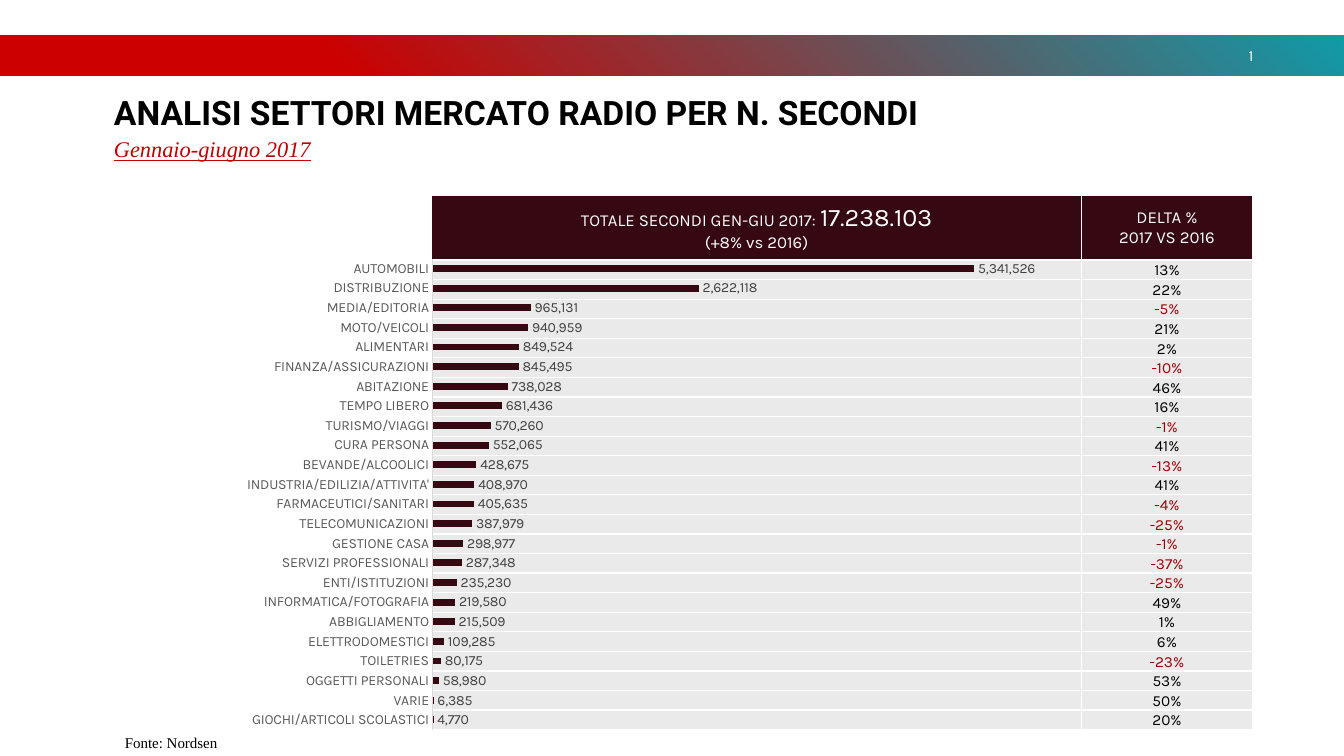
from pptx import Presentation
from pptx.chart.data import CategoryChartData
from pptx.dml.color import RGBColor
from pptx.enum.chart import XL_CHART_TYPE as ChartType, XL_LABEL_POSITION as LabelPosition, XL_TICK_MARK as TickMark
from pptx.enum.shapes import MSO_SHAPE as Preset
from pptx.enum.text import MSO_ANCHOR as Anchor, MSO_AUTO_SIZE as AutoSize, PP_ALIGN as Align
from pptx.oxml import parse_xml
from pptx.oxml.ns import nsdecls, qn
from pptx.util import Inches, Pt

WINE, GREY, RED = "360812", "EAEAEA", "9C0006"
SECTORS = [
    ("AUTOMOBILI", 5341526, 13), ("DISTRIBUZIONE", 2622118, 22),
    ("MEDIA/EDITORIA", 965131, -5), ("MOTO/VEICOLI", 940959, 21),
    ("ALIMENTARI", 849524, 2), ("FINANZA/ASSICURAZIONI", 845495, -10),
    ("ABITAZIONE", 738028, 46), ("TEMPO LIBERO", 681436, 16),
    ("TURISMO/VIAGGI", 570260, -1), ("CURA PERSONA", 552065, 41),
    ("BEVANDE/ALCOOLICI", 428675, -13), ("INDUSTRIA/EDILIZIA/ATTIVITA'", 408970, 41),
    ("FARMACEUTICI/SANITARI", 405635, -4), ("TELECOMUNICAZIONI", 387979, -25),
    ("GESTIONE CASA", 298977, -1), ("SERVIZI PROFESSIONALI", 287348, -37),
    ("ENTI/ISTITUZIONI", 235230, -25), ("INFORMATICA/FOTOGRAFIA", 219580, 49),
    ("ABBIGLIAMENTO", 215509, 1), ("ELETTRODOMESTICI", 109285, 6),
    ("TOILETRIES", 80175, -23), ("OGGETTI PERSONALI", 58980, 53),
    ("VARIE", 6385, 50), ("GIOCHI/ARTICOLI SCOLASTICI", 4770, 20),
]


def color(value):
    return RGBColor.from_string(value)


def style(font, size, name, value):
    font.size, font.name = Pt(size), name
    font.color.rgb = color(value)


deck = Presentation()
deck.slide_width, deck.slide_height = Inches(13.33), Inches(7.5)
page = deck.slides.add_slide(deck.slide_layouts[5])

band = page.shapes.add_shape(Preset.RECTANGLE, 0, Inches(0.35), Inches(13.33), Inches(0.4))
band.shadow.inherit = False
band.line.fill.background()
band.fill.gradient()
for stop, (position, shade) in zip(band.fill.gradient_stops, [(0.25, "CC0000"), (1, "119AA8")]):
    stop.position = position
    stop.color.rgb = color(shade)
gradient = band._element.spPr.find(qn("a:gradFill"))
gradient.replace(gradient.find(qn("a:lin")), parse_xml(
    f'<a:path {nsdecls("a")} path="circle"><a:fillToRect t="100000" r="100000"/></a:path>'))

title = page.shapes.title
title.left, title.top, title.width, title.height = Inches(1.13), Inches(0.96), Inches(9.23), Inches(0.67)
frame = title.text_frame
frame.auto_size, frame.vertical_anchor = AutoSize.NONE, Anchor.TOP
frame.margin_left = frame.margin_top = frame.margin_right = frame.margin_bottom = 0
frame.text = "ANALISI SETTORI MERCATO RADIO PER N. SECONDI\nGennaio-giugno 2017"
heading, period = frame.paragraphs
for para in (heading, period):
    para.alignment, para.line_spacing = Align.LEFT, 0.9
style(heading.font, 24, "Roboto", "000000")
heading.font.bold = True
style(period.font, 16, "Times New Roman", "C00000")
period.font.italic = period.font.underline = True
period.space_before = Pt(4)

source = page.shapes.add_textbox(Inches(1.14), Inches(7.22), Inches(1.47), Inches(0.28))
source.text_frame.word_wrap = True
source.text_frame.vertical_anchor = Anchor.BOTTOM
para = source.text_frame.paragraphs[0]
para.text = "Fonte: Nordsen"
para.space_before = Pt(3)
style(para.font, 10.7, "Times New Roman", "000000")

number = page.shapes.add_textbox(Inches(10.2), Inches(0.4), Inches(2.33), Inches(0.3))
number.text_frame.word_wrap = True
number.text_frame.vertical_anchor = Anchor.MIDDLE
para = number.text_frame.paragraphs[0]
para.alignment = Align.RIGHT
style(para.font, 11, "Karla", "FFFFFF")
para._p.append(parse_xml(
    f'<a:fld {nsdecls("a")} id="{{B6F15528-21DE-4FAA-801E-634DDDAF4B2B}}" type="slidenum">'
    '<a:rPr lang="it-IT"/><a:t>1</a:t></a:fld>'))

table = page.shapes.add_table(len(SECTORS) + 1, 2, Inches(4.28), Inches(1.94), Inches(8.14), Inches(5.29)).table
table.columns[0].width, table.columns[1].width = Inches(6.45), Inches(1.69)
for index, row in enumerate(table.rows):
    header = index == 0
    row.height = Inches(0.63) if header else Inches((5.29 - 0.63) / len(SECTORS))
    for cell in row.cells:
        cell.margin_left = cell.margin_right = Inches(0.13 if header else 0.01)
        cell.margin_top = Inches(0.07 if header else 0.01)
        cell.margin_bottom = Inches(0.07 if header else 0)
        cell.vertical_anchor = Anchor.MIDDLE if header else Anchor.BOTTOM
        for side in "LRTB":
            cell._tc.get_or_add_tcPr().append(parse_xml(
                f'<a:ln{side} {nsdecls("a")} w="{Pt(1)}"><a:solidFill>'
                f'<a:srgbClr val="FFFFFF"/></a:solidFill></a:ln{side}>'))
        cell.fill.solid()
        cell.fill.fore_color.rgb = color(WINE if header else GREY)
    if header:
        row.cells[0].text = "TOTALE SECONDI GEN-GIU 2017: \n(+8% vs 2016)"
        row.cells[1].text = "DELTA %\v2017 VS 2016"
    else:
        delta = SECTORS[index - 1][2]
        row.cells[1].text = f"{delta}%"
        row.cells[0]._tc.txBody.p_lst[0].append(parse_xml(f'<a:endParaRPr {nsdecls("a")} sz="1000"/>'))
    for cell in row.cells:
        for para in cell.text_frame.paragraphs:
            para.alignment = Align.CENTER
            shade = "FFFFFF" if header else RED if delta < 0 else "000000"
            style(para.font, 12 if header else 11, "Karla", shade)
total = table.cell(0, 0).text_frame.paragraphs[0].add_run()
total.text = "17.238.103"
total.font.size = Pt(18)

data = CategoryChartData(number_format="#,##0")
data.categories = [name for name, seconds, delta in SECTORS]
data.add_series("Series 1", [seconds for name, seconds, delta in SECTORS])
chart = page.shapes.add_chart(
    ChartType.BAR_CLUSTERED, Inches(1.46), Inches(2.37), Inches(9.14), Inches(4.92), data).chart
chart.has_legend = chart.has_title = False
style(chart.font, 10, "Calibri", "000000")

sector_axis = chart.category_axis
sector_axis.reverse_order = True
sector_axis.major_tick_mark = sector_axis.minor_tick_mark = TickMark.NONE
style(sector_axis.tick_labels.font, 10, "Karla", "595959")
sector_axis.format.line.color.rgb = color("D9D9D9")
sector_axis.format.line.width = Pt(0.75)
seconds_axis = chart.value_axis
seconds_axis.minimum_scale, seconds_axis.maximum_scale = 0, 6000000
seconds_axis.has_major_gridlines = False
seconds_axis.visible = False

plot = chart.plots[0]
plot.gap_width, plot.vary_by_categories = 182, False
bars = plot.series[0]
bars.format.fill.solid()
bars.format.fill.fore_color.rgb = color(WINE)
labels = bars.data_labels
labels.show_value = True
labels.position = LabelPosition.OUTSIDE_END
labels.number_format, labels.number_format_is_linked = "#,##0", False
style(labels.font, 10, "Karla", "404040")

chart._chartSpace.chart.plotArea.insert(0, parse_xml(
    f'<c:layout {nsdecls("c")}><c:manualLayout><c:layoutTarget val="inner"/>'
    '<c:xMode val="edge"/><c:yMode val="edge"/><c:x val="0.31"/><c:y val="0.04"/>'
    '<c:w val="0.66"/><c:h val="0.95"/></c:manualLayout></c:layout>'))

deck.save("out.pptx")
